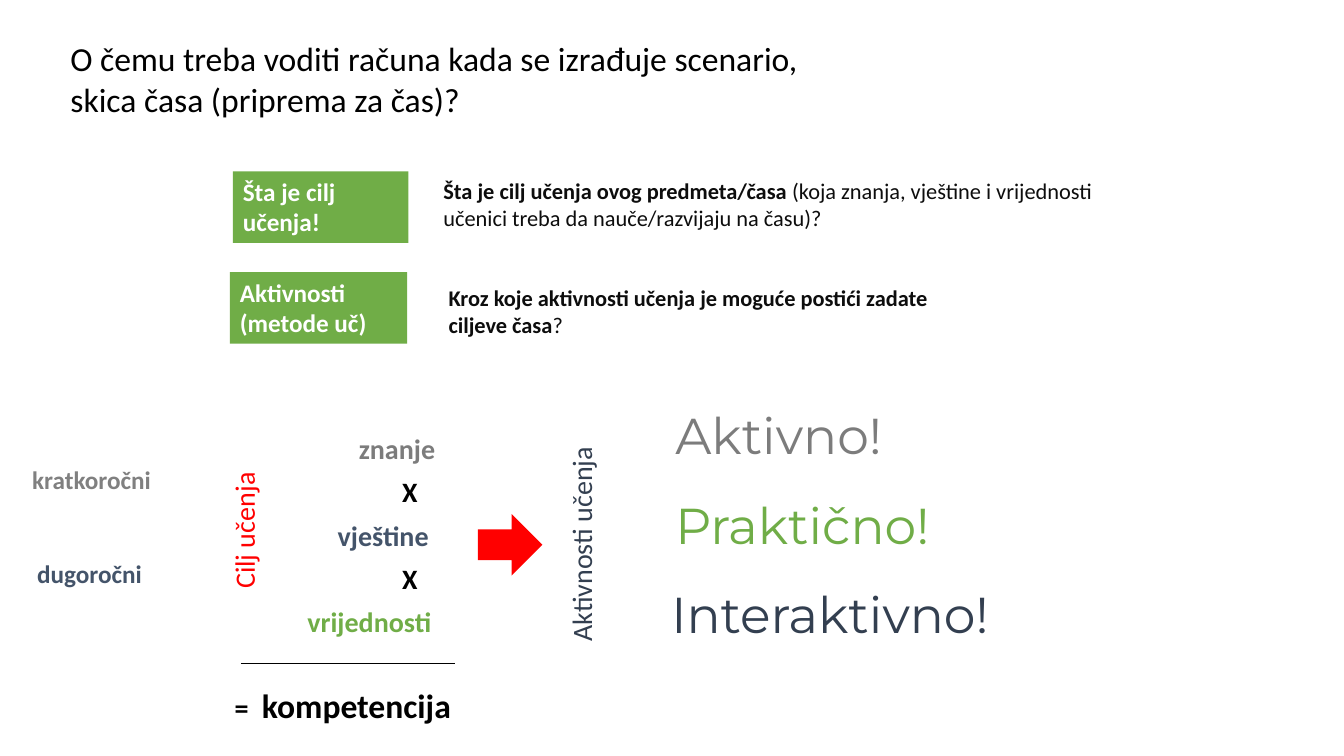
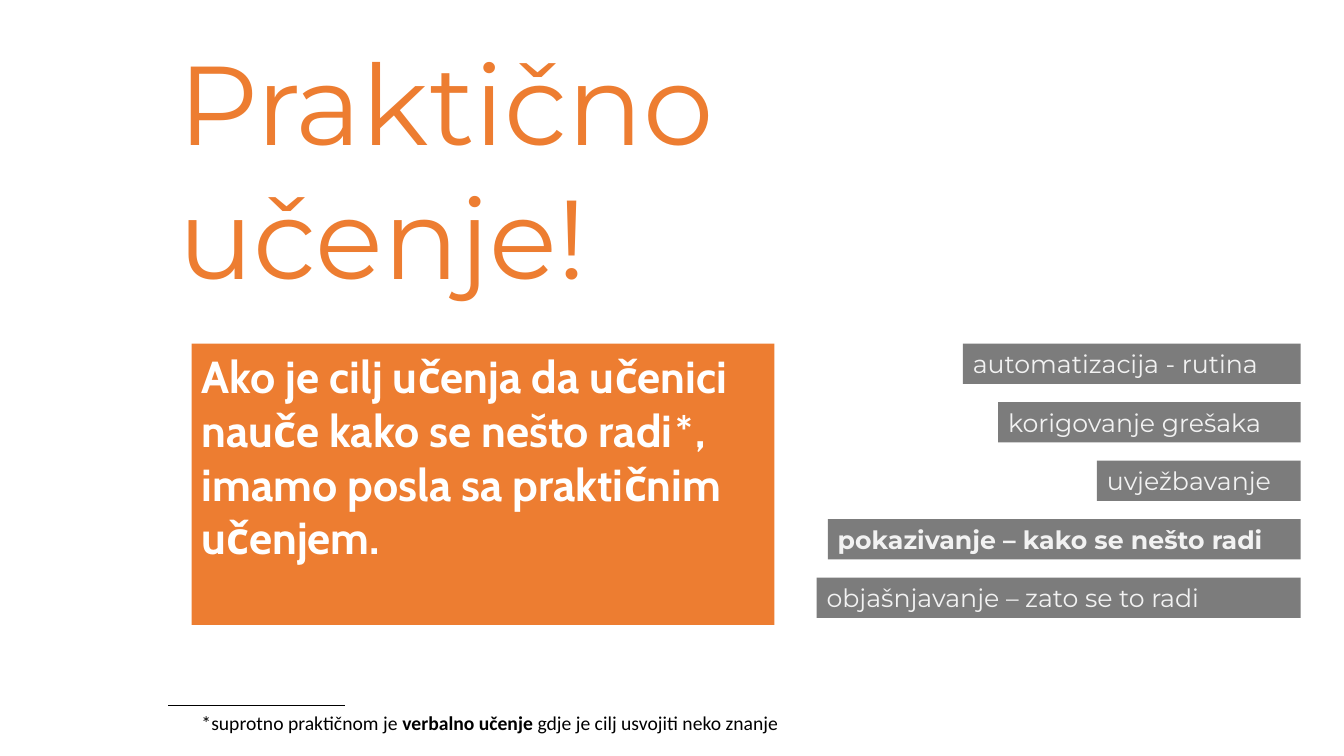
from dataclasses import dataclass

from lxml.etree import SubElement
from pptx import Presentation
from pptx.dml.color import RGBColor
from pptx.enum.shapes import MSO_CONNECTOR, MSO_SHAPE
from pptx.enum.text import MSO_ANCHOR, MSO_AUTO_SIZE, PP_ALIGN
from pptx.oxml.ns import qn
from pptx.util import Inches, Pt


@dataclass(frozen=True)
class Theme:
    body_font: str = "Calibri"
    display_font: str = "Montserrat"
    callout_font: str = "Cabin"
    black: str = "000000"
    ink: str = "0D0D0D"
    white: str = "FFFFFF"
    pale: str = "F2F2F2"
    gray: str = "7C7C7C"
    mid_gray: str = "808080"
    slate: str = "44546A"
    navy: str = "333F50"
    green: str = "70AD47"
    orange: str = "ED7D31"
    red: str = "FF0000"
    note: int = 14
    body: int = 16
    label: int = 18
    term: int = 20
    title: int = 24
    callout: int = 32
    slogan: int = 36
    hero: int = 80


@dataclass(frozen=True)
class Style:
    size: int
    color: str
    bold: bool = False
    font: str = Theme.body_font


THEME = Theme()


def inches(*lengths):
    return [Inches(length) for length in lengths]


def write(frame, paragraphs, wrap=True):
    """Fill a frame with paragraphs, each a list of (text, style) runs."""
    frame.word_wrap = wrap
    frame.vertical_anchor = MSO_ANCHOR.TOP
    for index, runs in enumerate(paragraphs):
        paragraph = frame.add_paragraph() if index else frame.paragraphs[0]
        paragraph.alignment = PP_ALIGN.LEFT
        for text, style in runs:
            run = paragraph.add_run()
            run.text = text
            run.font.name = style.font
            run.font.size = Pt(style.size)
            run.font.bold = style.bold
            run.font.color.rgb = RGBColor.from_string(style.color)


def add_text(slide, box, *paragraphs, wrap=True):
    shape = slide.shapes.add_textbox(*inches(*box))
    write(shape.text_frame, paragraphs, wrap)
    shape.text_frame.auto_size = MSO_AUTO_SIZE.SHAPE_TO_FIT_TEXT
    return shape


def add_label(slide, box, text, style, rotation=0):
    """Add a one-line text that never wraps."""
    shape = add_text(slide, box, [(text, style)], wrap=False)
    shape.rotation = rotation


def add_filled(slide, box, color, *paragraphs, kind=MSO_SHAPE.RECTANGLE):
    shape = slide.shapes.add_shape(kind, *inches(*box))
    shape.shadow.inherit = False
    shape.fill.solid()
    shape.fill.fore_color.rgb = RGBColor.from_string(color)
    shape.line.fill.background()
    write(shape.text_frame, paragraphs)


def add_rule(slide, left, top, width):
    line = slide.shapes.add_connector(
        MSO_CONNECTOR.STRAIGHT, *inches(left, top, left + width, top))
    line.line.color.rgb = RGBColor.from_string(THEME.black)
    line.line.width = Pt(0.5)
    SubElement(line._element.spPr, qn("a:effectLst"))


def add_question(slide, tag_box, tag, text_box, *paragraphs):
    """Place a green tag with its explanation on the right."""
    tag_style = Style(THEME.label, THEME.white, bold=True)
    add_filled(slide, tag_box, THEME.green, [(tag, tag_style)])
    add_text(slide, text_box, *paragraphs)


def add_terms(slide, left, top):
    """Place the short-term and long-term labels."""
    for dx, dy, width, text, color in (
        (0, 0, 1.46, "kratkoročni", THEME.mid_gray),
        (0.05, 0.93, 1.31, "dugoročni", THEME.slate),
    ):
        add_label(slide, (left + dx, top + dy, width, 0.4), text,
                  Style(THEME.label, color, bold=True))


def add_competence_product(slide, left, top):
    """Stack the factors, a rule and their product."""
    step = 0.43
    factors = (
        (1.29, 1.01, "znanje", THEME.gray),
        (1.72, 0.37, "X", THEME.black),
        (1.08, 1.15, "vještine", THEME.slate),
        (1.72, 0.37, "X", THEME.black),
        (0.78, 1.49, "vrijednosti", THEME.green),
    )
    for row, (dx, width, text, color) in enumerate(factors):
        add_label(slide, (left + dx, top + row * step, width, 0.44), text,
                  Style(THEME.term, color, bold=True))
    add_rule(slide, left + 0.22, top + 2.35, 2.12)
    add_label(slide, (left + 0.06, top + 2.57, 0.34, 0.44), "=",
              Style(THEME.term, THEME.black, bold=True))
    add_label(slide, (left + 0.33, top + 2.52, 2.1, 0.5), "kompetencija",
              Style(THEME.title, THEME.black, bold=True))


def add_slogans(slide, left, top):
    step = 0.89
    slogans = (
        (0, 2.47, "Aktivno!", THEME.gray),
        (0, 3.04, "Praktično!", THEME.green),
        (-0.04, 3.74, "Interaktivno!", THEME.navy),
    )
    for row, (dx, width, text, color) in enumerate(slogans):
        add_label(slide, (left + dx, top + row * step, width, 0.71), text,
                  Style(THEME.slogan, color, font=THEME.display_font))


def add_steps(slide, right, top):
    """Stack gray bars that share a right edge."""
    step = 0.58
    bars = (
        (3.35, "automatizacija - rutina", False),
        (3, "korigovanje grešaka", False),
        (2.02, "uvježbavanje", False),
        (4.69, "pokazivanje – kako se nešto radi", True),
        (4.8, "objašnjavanje – zato se to radi", False),
    )
    for row, (width, text, bold) in enumerate(bars):
        style = Style(THEME.label, THEME.pale, bold, THEME.display_font)
        add_filled(slide, (right - width, top + row * step, width, 0.4),
                   THEME.gray, [(text, style)])


def add_footnote(slide, left, top):
    plain = Style(THEME.note, THEME.black)
    strong = Style(THEME.note, THEME.black, bold=True)
    add_rule(slide, left, top, 1.75)
    add_text(slide, (left + 0.23, top, 5.95, 0.34), [
        ("*suprotno praktičnom je ", plain),
        ("verbalno učenje ", strong),
        ("gdje je cilj usvojiti neko znanje", plain),
    ], wrap=False)


def build_planning_slide(slide):
    plain = Style(THEME.body, THEME.ink)
    strong = Style(THEME.body, THEME.ink, bold=True)
    add_text(slide, (0.6, 0.33, 7.83, 0.91), [(
        "O čemu treba voditi računa kada se izrađuje scenario, "
        "skica časa (priprema za čas)?", Style(THEME.title, THEME.black))])
    add_question(
        slide, (2.31, 1.7, 1.74, 0.71), "Šta je cilj učenja!",
        (4.3, 1.71, 6.76, 0.64),
        [("Šta je cilj učenja ovog predmeta/časa ", strong),
         ("(koja znanja, vještine i vrijednosti učenici treba da "
          "nauče/razvijaju na času)?", plain)])
    add_question(
        slide, (2.28, 2.7, 1.76, 0.71), "Aktivnosti (metode uč)",
        (4.35, 2.77, 7.12, 0.64),
        [("Kroz koje aktivnosti učenja je moguće postići zadate", strong)],
        [("ciljeve časa", strong), ("?", plain)])
    add_terms(slide, 0.22, 4.56)
    add_label(slide, (1.73, 5.03, 1.38, 0.44), "Cilj učenja",
              Style(THEME.term, THEME.red), rotation=270)
    add_competence_product(slide, 2.17, 4.23)
    add_filled(slide, (4.74, 5.1, 0.64, 0.61), THEME.red,
               kind=MSO_SHAPE.RIGHT_ARROW)
    add_label(slide, (4.65, 5.13, 2.23, 0.44), "Aktivnosti učenja",
              Style(THEME.term, THEME.navy), rotation=270)
    add_slogans(slide, 6.6, 3.96)


def build_practice_slide(slide):
    callout = Style(THEME.callout, THEME.white, True, THEME.callout_font)
    star = Style(THEME.callout, THEME.white, True)
    add_text(slide, (1.67, 0.28, 8.98, 2.79), [(
        "Praktično učenje!",
        Style(THEME.hero, THEME.orange, font=THEME.display_font))])
    add_filled(slide, (1.9, 3.41, 5.78, 2.79), THEME.orange, [
        ("Ako je cilj učenja da učenici nauče kako se nešto radi", callout),
        ("*", star),
        (", imamo posla sa praktičnim učenjem.", callout),
    ])
    add_steps(slide, 12.9, 3.41)
    add_footnote(slide, 1.67, 7)


def main():
    presentation = Presentation()
    presentation.slide_width = Inches(13.33)
    presentation.slide_height = Inches(7.5)
    blank = presentation.slide_layouts[6]
    for build in (build_planning_slide, build_practice_slide):
        build(presentation.slides.add_slide(blank))
    presentation.save("out.pptx")


if __name__ == "__main__":
    main()
